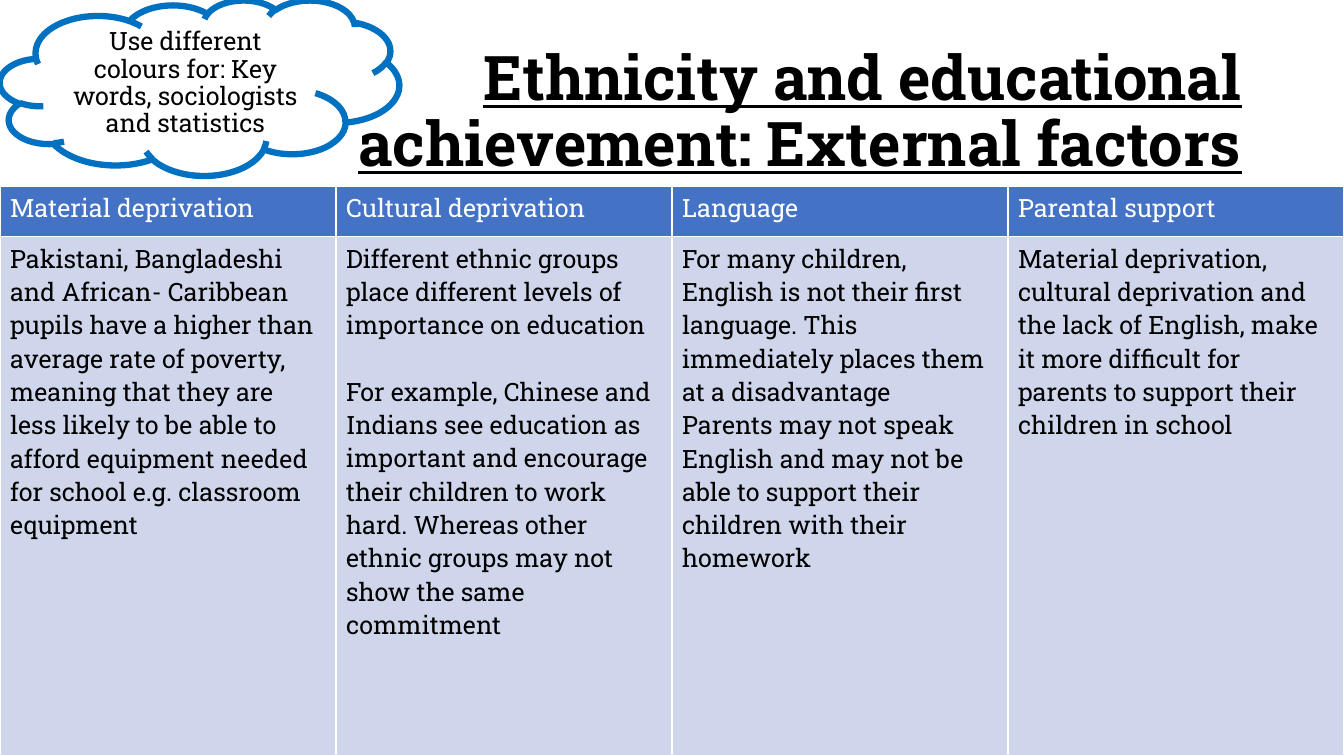
from dataclasses import dataclass

from lxml.etree import SubElement
from pptx import Presentation
from pptx.dml.color import RGBColor
from pptx.enum.shapes import MSO_SHAPE
from pptx.enum.text import MSO_ANCHOR, PP_ALIGN
from pptx.oxml.ns import qn
from pptx.util import Inches, Pt

TITLE = "Ethnicity and educational achievement: External factors"
REMINDER = "Use different colours for: Key words, sociologists and statistics"
FACTORS = {
    "Material deprivation": [
        "Pakistani, Bangladeshi and African- Caribbean pupils have a higher than average "
        "rate of poverty, meaning that they are less likely to be able to afford equipment "
        "needed for school e.g. classroom equipment",
    ],
    "Cultural deprivation": [
        "Different ethnic groups place different levels of importance on education",
        "For example, Chinese and Indians see education as important and encourage their "
        "children to work hard. Whereas other ethnic groups may not show the same commitment",
    ],
    "Language": [
        "For many children, English is not their first language. This immediately places "
        "them at a disadvantage",
        "Parents may not speak English and may not be able to support their children with "
        "their homework",
    ],
    "Parental support": [
        "Material deprivation, cultural deprivation and the lack of English, make it more "
        "difficult for parents to support their children in school",
    ],
}
SPACED_FACTOR = "Cultural deprivation"


@dataclass(frozen=True)
class Theme:
    font: str = "Roboto Slab"
    title_size: float = 44
    body_size: float = 18
    paragraph_gap: float = 23.7
    text: str = "000000"
    white: str = "FFFFFF"
    header: str = "4472C4"
    body: str = "CFD5EA"
    outline: str = "0070C0"


THEME = Theme()
SLIDE_WIDTH, SLIDE_HEIGHT = 13.33, 7.5
TABLE_TOP, HEADER_HEIGHT = 1.85, 0.5


def write(frame, texts, color=THEME.text, size=THEME.body_size, align=None, spacing=None, gap=0):
    """Fill a text frame, one paragraph per text, with a gap in points between them."""
    frame.word_wrap = True
    for index, text in enumerate(texts):
        paragraph = frame.add_paragraph() if index else frame.paragraphs[0]
        paragraph.text = text
        paragraph.alignment = align
        paragraph.line_spacing = spacing
        if index and gap:
            paragraph.space_before = Pt(gap)
        paragraph.font.name = THEME.font
        paragraph.font.size = Pt(size)
        paragraph.font.color.rgb = RGBColor.from_string(color)


def style_cell(cell, fill):
    """Give a cell thin white borders and a solid fill."""
    properties = cell._tc.get_or_add_tcPr()
    for side in ("lnL", "lnR", "lnT", "lnB"):
        border = SubElement(properties, qn(f"a:{side}"), w=str(Pt(1)))
        solid = SubElement(border, qn("a:solidFill"))
        SubElement(solid, qn("a:srgbClr"), val=THEME.white)
    cell.fill.solid()
    cell.fill.fore_color.rgb = RGBColor.from_string(fill)


def add_title(slide):
    box = slide.shapes.add_textbox(Inches(0.92), Inches(0.4), Inches(11.5), Inches(1.45))
    frame = box.text_frame
    frame.vertical_anchor = MSO_ANCHOR.MIDDLE
    write(frame, [TITLE], size=THEME.title_size, align=PP_ALIGN.RIGHT, spacing=0.9)
    font = frame.paragraphs[0].font
    font.bold = True
    font.underline = True


def add_factor_table(slide):
    body_height = SLIDE_HEIGHT - TABLE_TOP - HEADER_HEIGHT
    table = slide.shapes.add_table(
        2, len(FACTORS), 0, Inches(TABLE_TOP),
        Inches(SLIDE_WIDTH), Inches(HEADER_HEIGHT + body_height),
    ).table
    table.rows[0].height = Inches(HEADER_HEIGHT)
    table.rows[1].height = Inches(body_height)
    for column, (factor, points) in enumerate(FACTORS.items()):
        table.columns[column].width = Inches(SLIDE_WIDTH / len(FACTORS))
        header, body = table.cell(0, column), table.cell(1, column)
        style_cell(header, THEME.header)
        style_cell(body, THEME.body)
        write(header.text_frame, [factor], color=THEME.white)
        gap = THEME.paragraph_gap if factor == SPACED_FACTOR else 0
        write(body.text_frame, points, gap=gap)


def add_reminder_cloud(slide):
    cloud = slide.shapes.add_shape(MSO_SHAPE.CLOUD, 0, 0, Inches(3.96), Inches(1.74))
    cloud.shadow.inherit = False
    cloud.fill.solid()
    cloud.fill.fore_color.rgb = RGBColor.from_string(THEME.white)
    cloud.line.color.rgb = RGBColor.from_string(THEME.outline)
    cloud.line.width = Pt(4.5)
    cloud.text_frame.vertical_anchor = MSO_ANCHOR.MIDDLE
    write(cloud.text_frame, [REMINDER], align=PP_ALIGN.CENTER, spacing=0.9)


def main():
    presentation = Presentation()
    presentation.slide_width = Inches(SLIDE_WIDTH)
    presentation.slide_height = Inches(SLIDE_HEIGHT)
    slide = presentation.slides.add_slide(presentation.slide_layouts[6])
    add_title(slide)
    add_factor_table(slide)
    add_reminder_cloud(slide)
    presentation.save("out.pptx")


if __name__ == "__main__":
    main()
